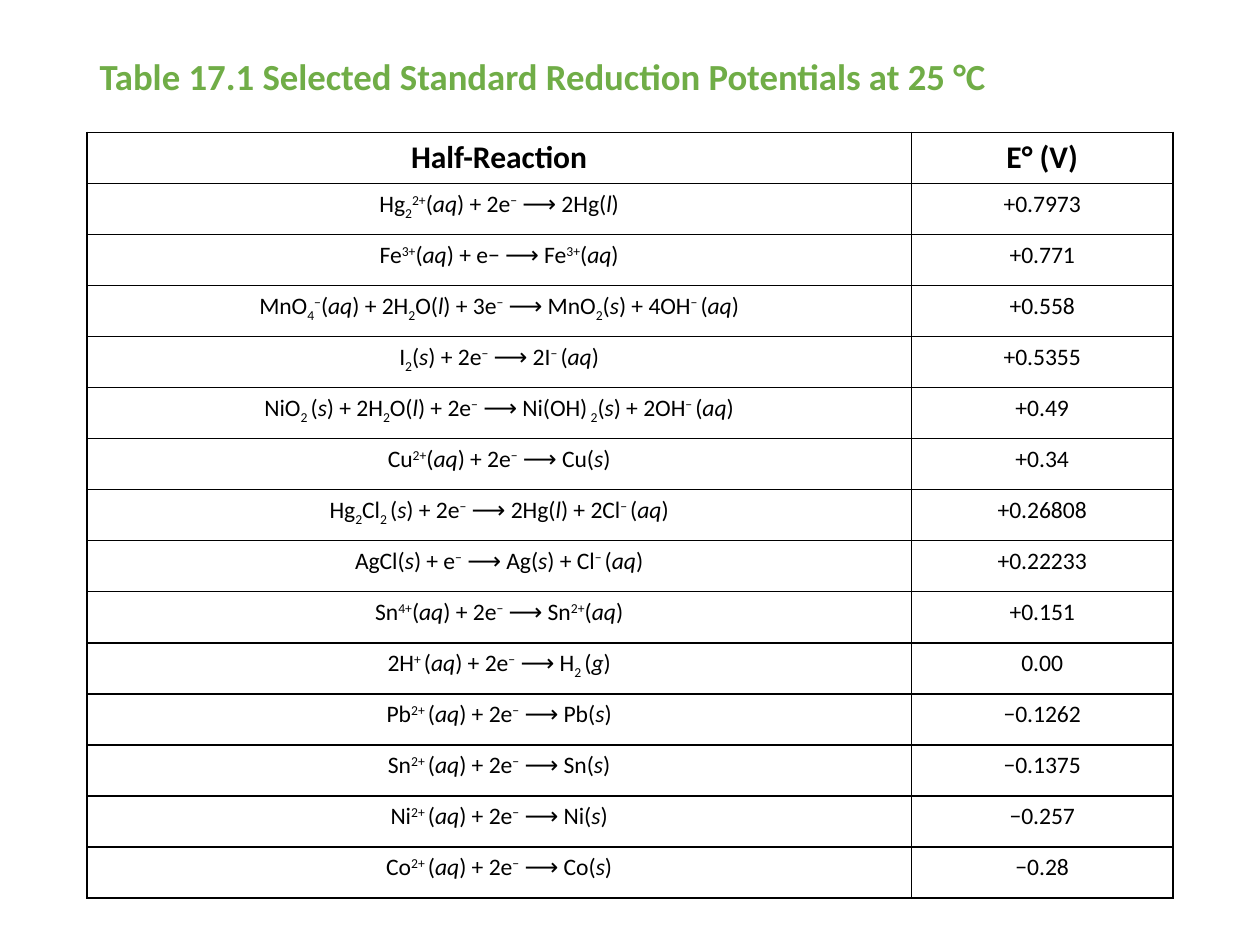
import dataclasses

import pptx
import pptx.dml.color
import pptx.enum.text
import pptx.oxml
import pptx.oxml.ns
import pptx.util

TITLE = "Table 17.1 Selected Standard Reduction Potentials at 25 °C"
HEADINGS = ("Half-Reaction", "E° (V)")
# ^ encloses superscripts, ~ subscripts and * italics.
POTENTIALS = [
    ("Hg~2~^2+^(*aq*) + 2e^−^ ⟶ 2Hg(*l*)", "+0.7973"),
    ("Fe^3+^(*aq*) + e− ⟶ Fe^3+^(*aq*)", "+0.771"),
    ("MnO~4~^−^(*aq*) + 2H~2~O(*l*) + 3e^−^ ⟶ MnO~2~(*s*) + 4OH^− ^(*aq*)", "+0.558"),
    ("I~2~(*s*) + 2e^−^ ⟶ 2I^− ^(*aq*)", "+0.5355"),
    ("NiO~2 ~(*s*) + 2H~2~O(*l*) + 2e^−^ ⟶ Ni(OH)~ 2~(*s*) + 2OH^− ^(*aq*)", "+0.49"),
    ("Cu^2+^(*aq*) + 2e^−^ ⟶ Cu(*s*)", "+0.34"),
    ("Hg~2~Cl~2 ~(*s*) + 2e^−^ ⟶ 2Hg(*l*) + 2Cl^− ^(*aq*)", "+0.26808"),
    ("AgCl(*s*) + e^−^ ⟶ Ag(*s*) + Cl^− ^(*aq*)", "+0.22233"),
    ("Sn^4+^(*aq*) + 2e^−^ ⟶ Sn^2+^(*aq*)", "+0.151"),
    ("2H^+ ^(*aq*) + 2e^−^ ⟶ H~2 ~(*g*)", "0.00"),
    ("Pb^2+ ^(*aq*) + 2e^−^ ⟶ Pb(*s*)", "−0.1262"),
    ("Sn^2+ ^(*aq*) + 2e^−^ ⟶ Sn(*s*)", "−0.1375"),
    ("Ni^2+ ^(*aq*) + 2e^−^ ⟶ Ni(*s*)", "−0.257"),
    ("Co^2+ ^(*aq*) + 2e^−^ ⟶ Co(*s*)", "−0.28"),
]
BASELINES = {"^": "30000", "~": "-25000"}


@dataclasses.dataclass(frozen=True)
class Theme:
    font: str = "Calibri"
    accent: str = "70AD47"
    ink: str = "000000"
    title_size: float = 21
    heading_size: float = 18
    body_size: float = 13.5
    border_width: float = 1


def split_markup(text):
    """Yield (piece, mark) pairs; mark is empty for plain text."""
    piece, mark = "", ""
    for character in text:
        if character not in "^~*":
            piece += character
            continue
        if piece:
            yield piece, mark
        piece, mark = "", "" if mark else character
    if piece:
        yield piece, mark


def write_text(frame, text, *, font, size, color, bold=False, align="LEFT", spacing=None):
    paragraph = frame.paragraphs[0]
    paragraph.alignment = getattr(pptx.enum.text.PP_ALIGN, align)
    if spacing:
        paragraph.line_spacing = spacing
    for piece, mark in split_markup(text):
        run = paragraph.add_run()
        run.text = piece
        run.font.name = font
        run.font.size = pptx.util.Pt(size)
        run.font.bold = bold
        run.font.italic = mark == "*"
        run.font.color.rgb = pptx.dml.color.RGBColor.from_string(color)
        if mark in BASELINES:
            run._r.get_or_add_rPr().set("baseline", BASELINES[mark])


class SlideBuilder:
    """Places elements by shares of the slide's width and height."""

    def __init__(self, presentation, theme):
        self.width = presentation.slide_width
        self.height = presentation.slide_height
        self.theme = theme
        self.slide = presentation.slides.add_slide(presentation.slide_layouts[5])

    def box(self, left, top, width, height):
        return (round(left * self.width), round(top * self.height),
                round(width * self.width), round(height * self.height))

    def title(self, text, *shares):
        shape = self.slide.shapes.title
        shape.left, shape.top, shape.width, shape.height = self.box(*shares)
        frame = shape.text_frame
        frame.word_wrap = True
        frame.auto_size = pptx.enum.text.MSO_AUTO_SIZE.NONE
        frame.vertical_anchor = pptx.enum.text.MSO_ANCHOR.MIDDLE
        write_text(frame, text, font=self.theme.font, size=self.theme.title_size,
                   color=self.theme.accent, bold=True, spacing=0.9)

    def table(self, rows, column_shares, *shares):
        """Draw a ruled table whose first row holds the headings."""
        box = self.box(*shares)
        table = self.slide.shapes.add_table(len(rows), len(column_shares), *box).table
        table.first_row = table.horz_banding = False
        for column, share in zip(table.columns, column_shares):
            column.width = round(share * box[2])
        for row_index, row in enumerate(rows):
            heading = row_index == 0
            size = self.theme.heading_size if heading else self.theme.body_size
            for column_index, text in enumerate(row):
                cell = table.cell(row_index, column_index)
                self.cell_borders(cell)
                cell.fill.background()
                write_text(cell.text_frame, text, font=self.theme.font, size=size,
                           color=self.theme.ink, bold=heading, align="CENTER")

    def cell_borders(self, cell):
        properties = cell._tc.get_or_add_tcPr()
        width = pptx.util.Pt(self.theme.border_width)
        for side in "LRTB":
            properties.append(pptx.oxml.parse_xml(
                f'<a:ln{side} {pptx.oxml.ns.nsdecls("a")} w="{width}"><a:solidFill>'
                f'<a:srgbClr val="{self.theme.ink}"/></a:solidFill></a:ln{side}>'))


def main():
    presentation = pptx.Presentation()
    presentation.slide_width = pptx.util.Inches(10)
    presentation.slide_height = pptx.util.Inches(7.5)
    builder = SlideBuilder(presentation, Theme())
    margin, content_width = 0.069, 0.862
    builder.title(TITLE, margin, 0.053, content_width, 0.061)
    builder.table([HEADINGS, *POTENTIALS], (0.759, 0.241),
                  margin, 0.14, content_width, 0.811)
    presentation.save("out.pptx")


if __name__ == "__main__":
    main()
